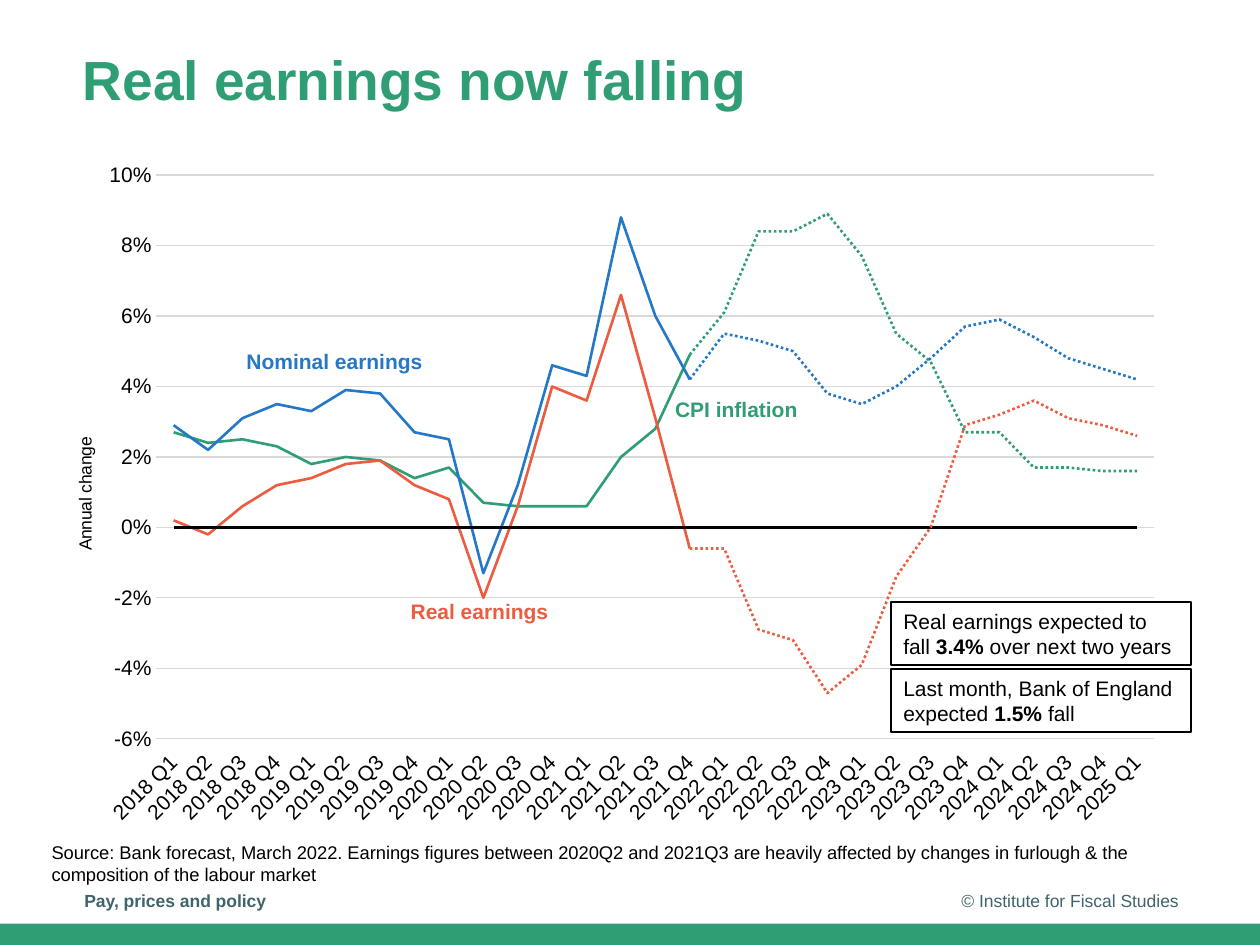
"""Build a slide charting nominal earnings, real earnings and CPI inflation."""
from lxml import etree
from pptx import Presentation
from pptx import util as u
from pptx.chart.data import CategoryChartData
from pptx.dml.color import RGBColor
from pptx.enum import chart as ch, dml, shapes, text
from pptx.oxml.ns import qn

GREEN = RGBColor(0x30, 0x9E, 0x75)
BLUE = RGBColor(0x24, 0x78, 0xC7)
RED = RGBColor(0xEB, 0x5C, 0x40)
BLACK = RGBColor(0, 0, 0)
SLATE = RGBColor(0x40, 0x64, 0x6D)
GREY = RGBColor(0xD9, 0xD9, 0xD9)
FONT = "Arial"

QUARTERS = [f"{2018 + n // 4} Q{n % 4 + 1}" for n in range(29)]
LAST = 15
PAST = [
    ("CPI inflation", GREEN, [2.7, 2.4, 2.5, 2.3, 1.8, 2, 1.9, 1.4, 1.7, 0.7, 0.6, 0.6, 0.6, 2, 2.8, 4.9]),
    ("Nominal earnings", BLUE, [2.9, 2.2, 3.1, 3.5, 3.3, 3.9, 3.8, 2.7, 2.5, -1.3, 1.2, 4.6, 4.3, 8.8, 6, 4.2]),
    ("Real earnings", RED, [0.2, -0.2, 0.6, 1.2, 1.4, 1.8, 1.9, 1.2, 0.8, -2, 0.6, 4, 3.6, 6.6, 3.1, -0.6]),
    ("Zero", BLACK, [0] * len(QUARTERS)),
]
AHEAD = [
    ("CPI forecast", GREEN, [4.9, 6.1, 8.4, 8.4, 8.9, 7.7, 5.5, 4.7, 2.7, 2.7, 1.7, 1.7, 1.6, 1.6]),
    ("Nominal forecast", BLUE, [4.2, 5.5, 5.3, 5, 3.8, 3.5, 4, 4.8, 5.7, 5.9, 5.4, 4.8, 4.5, 4.2]),
    ("Real forecast", RED, [-0.6, -0.6, -2.9, -3.2, -4.7, -3.9, -1.4, 0, 2.9, 3.2, 3.6, 3.1, 2.9, 2.6]),
]


def place(box):
    """Turn left, top, width and height in centimetres into lengths."""
    return [u.Cm(n) for n in box]


def style(font, size, color=BLACK, bold=False):
    """Set the face, size, colour and weight of a font."""
    font.name, font.size, font.bold = FONT, u.Pt(size), bold
    font.color.rgb = color


def write(frame, *parts, size=12, color=BLACK, bold=False, align=text.PP_ALIGN.LEFT,
          anchor=text.MSO_ANCHOR.TOP, space=None):
    """Fill a frame with one paragraph whose every second part is bold."""
    frame.word_wrap = True
    frame.vertical_anchor = anchor
    para = frame.paragraphs[0]
    para.alignment = align
    para.line_spacing = space
    for n, part in enumerate(parts):
        run = para.add_run()
        run.text = part
        style(run.font, size, color, bold or n % 2 == 1)


def label(slide, box, words, **form):
    """Add a text box."""
    write(slide.shapes.add_textbox(*place(box)).text_frame, words, **form)


def block(slide, box, fill=None, line=None):
    """Add a plain rectangle and return it."""
    shape = slide.shapes.add_shape(shapes.MSO_SHAPE.RECTANGLE, *place(box))
    shape.shadow.inherit = False
    if fill is None:
        shape.fill.background()
    else:
        shape.fill.solid()
        shape.fill.fore_color.rgb = fill
    if line is None:
        shape.line.fill.background()
    else:
        shape.line.color.rgb = line
        shape.line.width = u.Pt(1.25)
    return shape


def frame_plot(chart, **sides):
    """Fix the inner plot area as fractions of the chart."""
    area = chart._chartSpace.chart.plotArea
    for old in area.findall(qn("c:layout")):
        area.remove(old)
    layout = etree.Element(qn("c:layout"))
    area.insert(0, layout)
    manual = etree.SubElement(layout, qn("c:manualLayout"))
    marks = {"layoutTarget": "inner", "xMode": "edge", "yMode": "edge", **sides}
    for key, val in marks.items():
        etree.SubElement(manual, qn(f"c:{key}")).set("val", str(val))


def turn(chart, where, angle):
    """Rotate the text of a chart part by degrees."""
    for body in chart._chartSpace.xpath(f".//{where}//a:bodyPr"):
        body.set("rot", str(angle * 60000))
        body.set("vert", "horz")


def set_axes(chart):
    """Format both axes, the gridlines and the axis title."""
    cat, val = chart.category_axis, chart.value_axis
    for axis in (cat, val):
        axis.major_tick_mark = axis.minor_tick_mark = ch.XL_TICK_MARK.NONE
        style(axis.tick_labels.font, 12)
    cat.tick_label_position = ch.XL_TICK_LABEL_POSITION.LOW
    cat.format.line.color.rgb = GREY
    cat.format.line.width = u.Pt(0.75)
    val.minimum_scale, val.maximum_scale, val.major_unit = -0.06, 0.1, 0.02
    val.tick_labels.number_format = "0%"
    val.tick_labels.number_format_is_linked = False
    val.format.line.fill.background()
    val.major_gridlines.format.line.color.rgb = GREY
    val.major_gridlines.format.line.width = u.Pt(0.75)
    write(val.axis_title.text_frame, "Annual change", size=10, align=None)
    turn(chart, "c:catAx/c:txPr", -45)
    turn(chart, "c:valAx/c:title", -90)


def add_plot(slide, box):
    """Add the line chart with solid outturns and dotted forecasts."""
    data = CategoryChartData(number_format="0.0%")
    data.categories = QUARTERS
    for group, lead in ((PAST, 0), (AHEAD, LAST)):
        for name, _, vals in group:
            row = [None] * lead + [round(v / 100, 3) for v in vals]
            data.add_series(name, row + [None] * (len(QUARTERS) - len(row)))
    chart = slide.shapes.add_chart(ch.XL_CHART_TYPE.LINE, *place(box), data).chart
    chart.has_legend = chart.has_title = False
    style(chart.font, 10)
    chart.plots[0].vary_by_categories = False
    for n, (row, (_, color, _)) in enumerate(zip(chart.plots[0].series, PAST + AHEAD)):
        row.smooth = False
        row.marker.style = ch.XL_MARKER_STYLE.NONE
        row.format.line.color.rgb = color
        row.format.line.width = u.Pt(1.5)
        if n >= len(PAST):
            row.format.line.dash_style = dml.MSO_LINE.ROUND_DOT
    set_axes(chart)
    frame_plot(chart, x=0.078, y=0.034, w=0.905, h=0.805)


def main():
    """Build and save the slide."""
    deck = Presentation()
    deck.slide_width, deck.slide_height = u.Cm(25.4), u.Cm(19.05)
    slide = deck.slides.add_slide(deck.slide_layouts[6])
    block(slide, (0, 18.62, 25.4, 0.43), fill=GREEN)
    add_plot(slide, (1.42, 3.05, 22.23, 14.12))

    mid = text.MSO_ANCHOR.MIDDLE
    label(slide, (1.45, 17.65, 8.59, 1.02), "Pay, prices and policy",
          size=10, color=SLATE, bold=True, anchor=mid)
    label(slide, (18.29, 17.65, 5.72, 1.02), "© Institute for Fiscal Studies",
          size=10, color=SLATE, align=text.PP_ALIGN.RIGHT, anchor=mid)
    label(slide, (1.42, 0.94, 19, 1.6), "Real earnings now falling",
          size=31.5, color=GREEN, bold=True, space=0.9)

    spots = [(13.36, 7.87), (4.72, 6.91), (8.03, 11.94)]
    for (name, color, _), spot in zip(PAST, spots):
        label(slide, (*spot, 5.5, 0.76), name, color=color, bold=True)
    label(slide, (0.79, 16.84, 23.98, 1.14),
          "Source: Bank forecast, March 2022. Earnings figures between 2020Q2 and 2021Q3 "
          "are heavily affected by changes in furlough & the composition of the labour market",
          size=10.5)

    notes = [("Real earnings expected to fall ", "3.4%", " over next two years"),
             ("Last month, Bank of England expected ", "1.5%", " fall")]
    for n, parts in enumerate(notes):
        note = block(slide, (17.96, 12.14 + 1.35 * n, 6.05, 1.27), line=BLACK)
        write(note.text_frame, *parts)

    deck.save("out.pptx")


if __name__ == "__main__":
    main()
